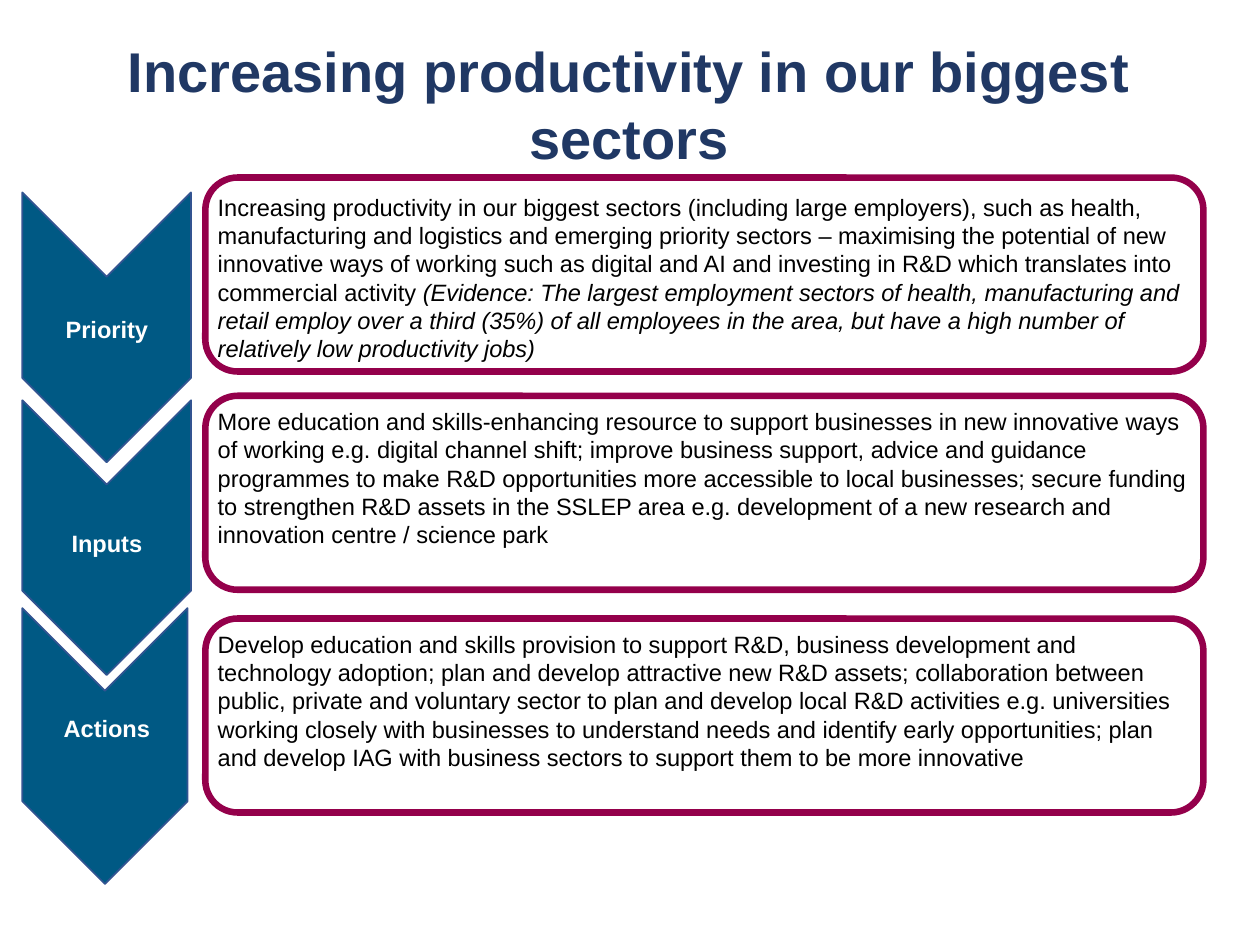
import pptx
import pptx.util
import pptx.dml.color
import pptx.enum.shapes
import pptx.enum.text

Cm = pptx.util.Cm
Pt = pptx.util.Pt
SHAPES = pptx.enum.shapes.MSO_SHAPE
ALIGN = pptx.enum.text.PP_ALIGN
ANCHOR = pptx.enum.text.MSO_ANCHOR

COLOURS = {
    "title": "203864", "arrow": "005984", "arrow_line": "325491",
    "box_line": "94004B", "white": "FFFFFF", "text": "000000",
}
TITLE = "Increasing productivity in our biggest sectors"
STAGES = [
    {
        "label": "Priority", "label_top": 6.22, "box_top": 3.58, "text_gap": 0.18,
        "arrow_width": 3.4, "arrow_length": 5.44,
        "text": "Increasing productivity in our biggest sectors (including large employers), "
                "such as health, manufacturing and logistics and emerging priority sectors – "
                "maximising the potential of new innovative ways of working such as digital "
                "and AI and investing in R&D which translates into commercial activity ",
        "evidence": "(Evidence: The largest employment sectors of health, manufacturing and "
                    "retail employ over a third (35%) of all employees in the area, but have "
                    "a high number of relatively low productivity jobs)",
    },
    {
        "label": "Inputs", "label_top": 10.54, "box_top": 7.98, "text_gap": 0.1,
        "arrow_width": 3.4, "arrow_length": 5.54,
        "text": "More education and skills-enhancing resource to support businesses in new "
                "innovative ways of working e.g. digital channel shift; improve business "
                "support, advice and guidance programmes to make R&D opportunities more "
                "accessible to local businesses; secure funding to strengthen R&D assets in "
                "the SSLEP area e.g. development of a new research and innovation centre / "
                "science park",
        "evidence": "",
    },
    {
        "label": "Actions", "label_top": 14.27, "box_top": 12.47, "text_gap": 0.1,
        "arrow_width": 3.33, "arrow_length": 5.56,
        "text": "Develop education and skills provision to support R&D, business development "
                "and technology adoption; plan and develop attractive new R&D assets; "
                "collaboration between public, private and voluntary sector to plan and "
                "develop local R&D activities e.g. universities working closely with "
                "businesses to understand needs and identify early opportunities; plan and "
                "develop IAG with business sectors to support them to be more innovative",
        "evidence": "",
    },
]
BOX_LEFT, BOX_WIDTH, BOX_HEIGHT = 4.14, 20.12, 3.91
ARROW_LEFT, ARROW_TOP, ARROW_PITCH = 0.45, 3.88, 4.19
LABEL_LEFT, LABEL_WIDTH, LABEL_HEIGHT = 0.81, 2.69, 0.84


def colour(name):
    """Return the named colour."""
    return pptx.dml.color.RGBColor.from_string(COLOURS[name])


def write(paragraph, text, size=13.5, color="text", bold=False, italic=False, align=ALIGN.LEFT):
    """Add one formatted run to a paragraph."""
    paragraph.alignment = align
    run = paragraph.add_run()
    run.text = text
    run.font.name = "Arial"
    run.font.size = Pt(size)
    run.font.bold = bold
    run.font.italic = italic
    run.font.color.rgb = colour(color)


def add_text_box(slide, left, top, width, height):
    """Add a wrapping text box and return its first paragraph."""
    frame = slide.shapes.add_textbox(Cm(left), Cm(top), Cm(width), Cm(height)).text_frame
    frame.word_wrap = True
    return frame.paragraphs[0]


def add_outlined(slide, kind, left, top, width, height, fill, line, weight):
    """Add a filled and outlined preset shape."""
    shape = slide.shapes.add_shape(kind, Cm(left), Cm(top), Cm(width), Cm(height))
    shape.shadow.inherit = False
    shape.fill.solid()
    shape.fill.fore_color.rgb = colour(fill)
    shape.line.color.rgb = colour(line)
    shape.line.width = Pt(weight)
    return shape


def add_title(slide):
    """Place and format the title."""
    title = slide.shapes.title
    title.left, title.top, title.width, title.height = Cm(1.8), Cm(0.61), Cm(21.77), Cm(3)
    title.text_frame.word_wrap = True
    title.text_frame.auto_size = pptx.enum.text.MSO_AUTO_SIZE.NONE
    title.text_frame.vertical_anchor = ANCHOR.TOP
    write(title.text_frame.paragraphs[0], TITLE, size=32, color="title", bold=True,
          align=ALIGN.CENTER)


def add_stage(slide, index, stage):
    """Add the box, arrow and texts of one stage."""
    add_outlined(slide, SHAPES.ROUNDED_RECTANGLE, BOX_LEFT, stage["box_top"],
                 BOX_WIDTH, BOX_HEIGHT, "white", "box_line", 3.75)
    paragraph = add_text_box(slide, BOX_LEFT, stage["box_top"] + stage["text_gap"],
                             BOX_WIDTH, BOX_HEIGHT - stage["text_gap"])
    write(paragraph, stage["text"])
    if stage["evidence"]:
        write(paragraph, stage["evidence"], italic=True)

    width, length = stage["arrow_width"], stage["arrow_length"]
    inset = (length - width) / 2
    arrow = add_outlined(slide, SHAPES.CHEVRON, ARROW_LEFT - inset,
                         ARROW_TOP + index * ARROW_PITCH + inset,
                         length, width, "arrow", "arrow_line", 1)
    arrow.rotation = 90
    label = add_text_box(slide, LABEL_LEFT, stage["label_top"], LABEL_WIDTH, LABEL_HEIGHT)
    write(label, stage["label"], color="white", bold=True, align=ALIGN.CENTER)


def main():
    """Build and save the slide."""
    presentation = pptx.Presentation()
    presentation.slide_width, presentation.slide_height = Cm(25.4), Cm(19.05)
    slide = presentation.slides.add_slide(presentation.slide_layouts[5])
    add_title(slide)
    for index, stage in enumerate(STAGES):
        add_stage(slide, index, stage)
    presentation.save("out.pptx")


if __name__ == "__main__":
    main()
